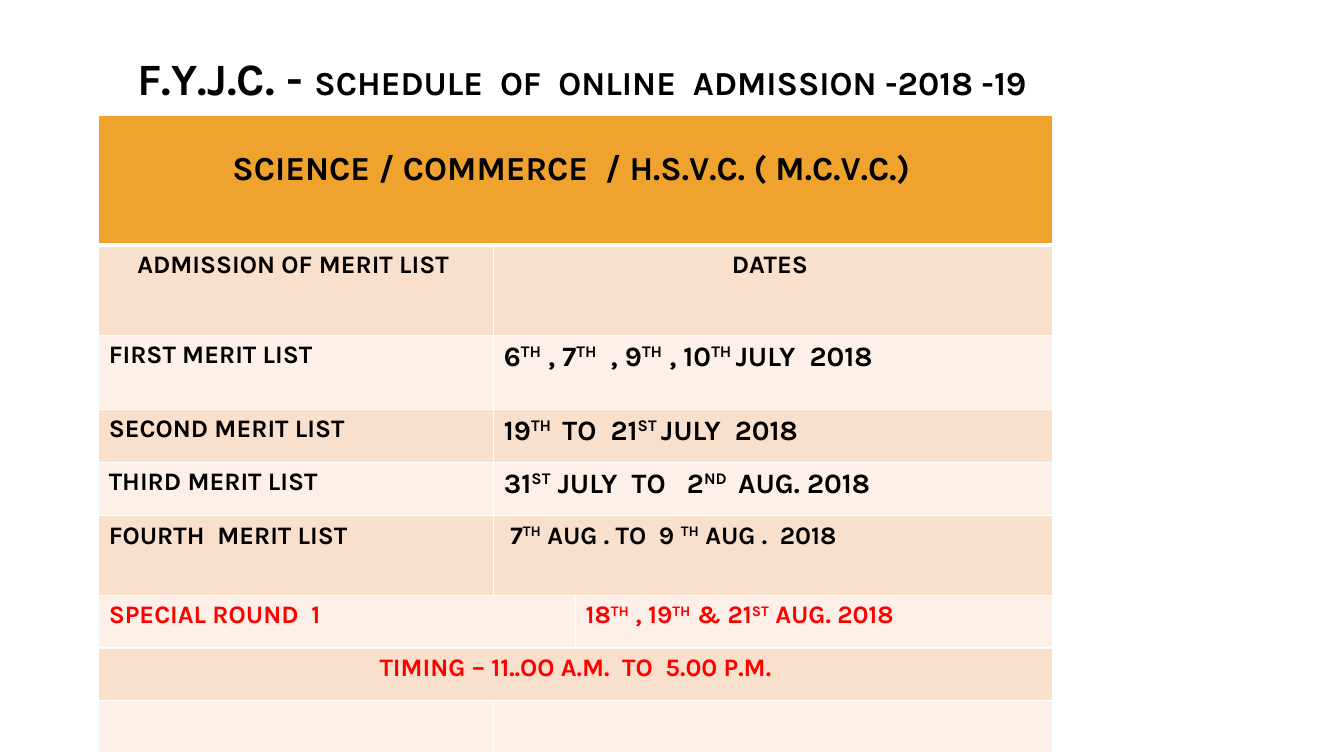
import pptx
import pptx.dml.color
import pptx.enum.text
import pptx.oxml
import pptx.oxml.ns
import pptx.util
from pptx.util import Pt

RGBColor = pptx.dml.color.RGBColor
ALIGN = pptx.enum.text.PP_ALIGN

BLACK = RGBColor(0x00, 0x00, 0x00)
RED = RGBColor(0xFF, 0x00, 0x00)
WHITE = RGBColor(0xFF, 0xFF, 0xFF)
ORANGE = RGBColor(0xF0, 0xA2, 0x2E)
PEACH = RGBColor(0xF9, 0xE0, 0xCD)
CREAM = RGBColor(0xFC, 0xF0, 0xE8)

COLUMN_WIDTHS = [282.24, 58.32, 340.56]
ROW_HEIGHTS = [92.5, 64.5, 53, 38, 38, 57, 37.5, 37.5, 37.5]

MERIT_LISTS = [
    ("FIRST MERIT LIST", "6^TH^ , 7^TH^  , 9^TH^ , 10^TH ^JULY  2018", 20),
    ("SECOND MERIT LIST", "19^TH ^ TO  21^ST ^JULY  2018", 20),
    ("THIRD MERIT LIST", "31^ST^ JULY  TO   2^ND ^ AUG. 2018", 20),
    ("FOURTH  MERIT LIST", " 7^TH^ AUG . TO  9 ^TH^ AUG .  2018", 18),
]


class Page:
    font = "Karla"

    def __init__(self, deck):
        self.slide = deck.slides.add_slide(deck.slide_layouts[6])

    def span(self, para, text, size, color=BLACK, raised=False):
        span = para.add_run()
        span.text = text
        span.font.name = self.font
        span.font.size = Pt(size)
        span.font.bold = True
        span.font.color.rgb = color
        if raised:
            span._r.get_or_add_rPr().set("baseline", "30000")

    def title(self, left, top, width, height, indent, pieces):
        box = self.slide.shapes.add_textbox(Pt(left), Pt(top), Pt(width), Pt(height))
        frame = box.text_frame
        frame.word_wrap = True
        frame.margin_left = Pt(indent)
        for text, size in pieces:
            self.span(frame.paragraphs[0], text, size)

    def table(self, left, top, widths, heights):
        frame = self.slide.shapes.add_table(
            len(heights), len(widths), Pt(left), Pt(top), Pt(sum(widths)), Pt(sum(heights)))
        table = frame.table
        for column, width in zip(table.columns, widths):
            column.width = Pt(width)
        for number, (row, height) in enumerate(zip(table.rows, heights)):
            row.height = Pt(height)
            fill = ORANGE if number == 0 else PEACH if number % 2 else CREAM
            for cell in row.cells:
                self.border(cell, "L", 1)
                self.border(cell, "R", 1)
                self.border(cell, "T", 3 if number == 1 else 1)
                self.border(cell, "B", 3 if number == 0 else 1)
                cell.fill.solid()
                cell.fill.fore_color.rgb = fill
        return table

    def border(self, cell, side, width):
        line = pptx.oxml.parse_xml(
            f'<a:ln{side} {pptx.oxml.ns.nsdecls("a")} w="{Pt(width)}">'
            f'<a:solidFill><a:srgbClr val="{WHITE}"/></a:solidFill></a:ln{side}>')
        cell._tc.get_or_add_tcPr().append(line)

    def cell(self, cell, text, size=18, color=BLACK, align=ALIGN.LEFT):
        para = cell.text_frame.paragraphs[0]
        para.alignment = align
        for number, piece in enumerate(text.split("^")):
            if piece:
                self.span(para, piece, size, color, raised=number % 2 == 1)


def main():
    deck = pptx.Presentation()
    deck.slide_width = Pt(960)
    deck.slide_height = Pt(540)
    page = Page(deck)
    page.title(28.08, 32.4, 845.28, 200.88, 70, [
        ("F.Y.J.C. - ", 32),
        ("SCHEDULE  OF  ONLINE  ADMISSION -2018 -19", 24),
    ])

    schedule = page.table(70.56, 82.5, COLUMN_WIDTHS, ROW_HEIGHTS)
    last = len(ROW_HEIGHTS) - 1
    for row in (0, last - 1):
        schedule.cell(row, 0).merge(schedule.cell(row, 2))
    for row in (1, 2, 3, 4, 5, last):
        schedule.cell(row, 1).merge(schedule.cell(row, 2))
    schedule.cell(6, 0).merge(schedule.cell(6, 1))

    heading = schedule.cell(0, 0)
    heading.margin_top = Pt(24.6)
    page.cell(heading, "SCIENCE / COMMERCE  / H.S.V.C. ( M.C.V.C.) ", 24, align=ALIGN.CENTER)
    page.cell(schedule.cell(1, 0), "ADMISSION OF MERIT LIST ", align=ALIGN.CENTER)
    page.cell(schedule.cell(1, 1), "DATES ", align=ALIGN.CENTER)
    for row, (name, dates, size) in enumerate(MERIT_LISTS, start=2):
        page.cell(schedule.cell(row, 0), name)
        page.cell(schedule.cell(row, 1), dates, size)
    page.cell(schedule.cell(6, 0), "SPECIAL ROUND  1", color=RED)
    page.cell(schedule.cell(6, 2), "18^TH^ , 19^TH^ & 21^ST^ AUG. 2018", color=RED)
    page.cell(schedule.cell(7, 0), "TIMING – 11..OO A.M.  TO  5.00 P.M.", color=RED, align=ALIGN.CENTER)

    deck.save("out.pptx")


if __name__ == "__main__":
    main()
